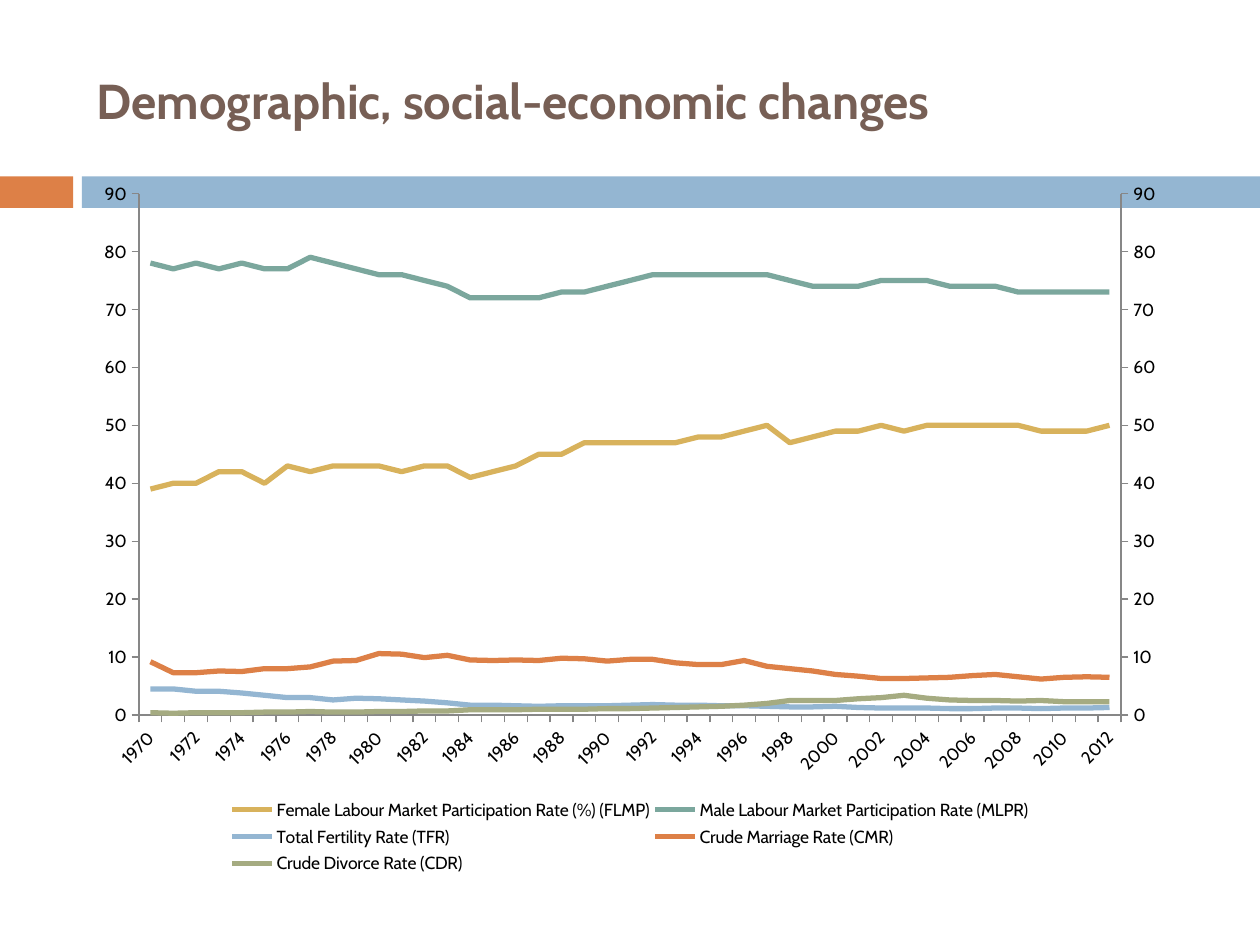
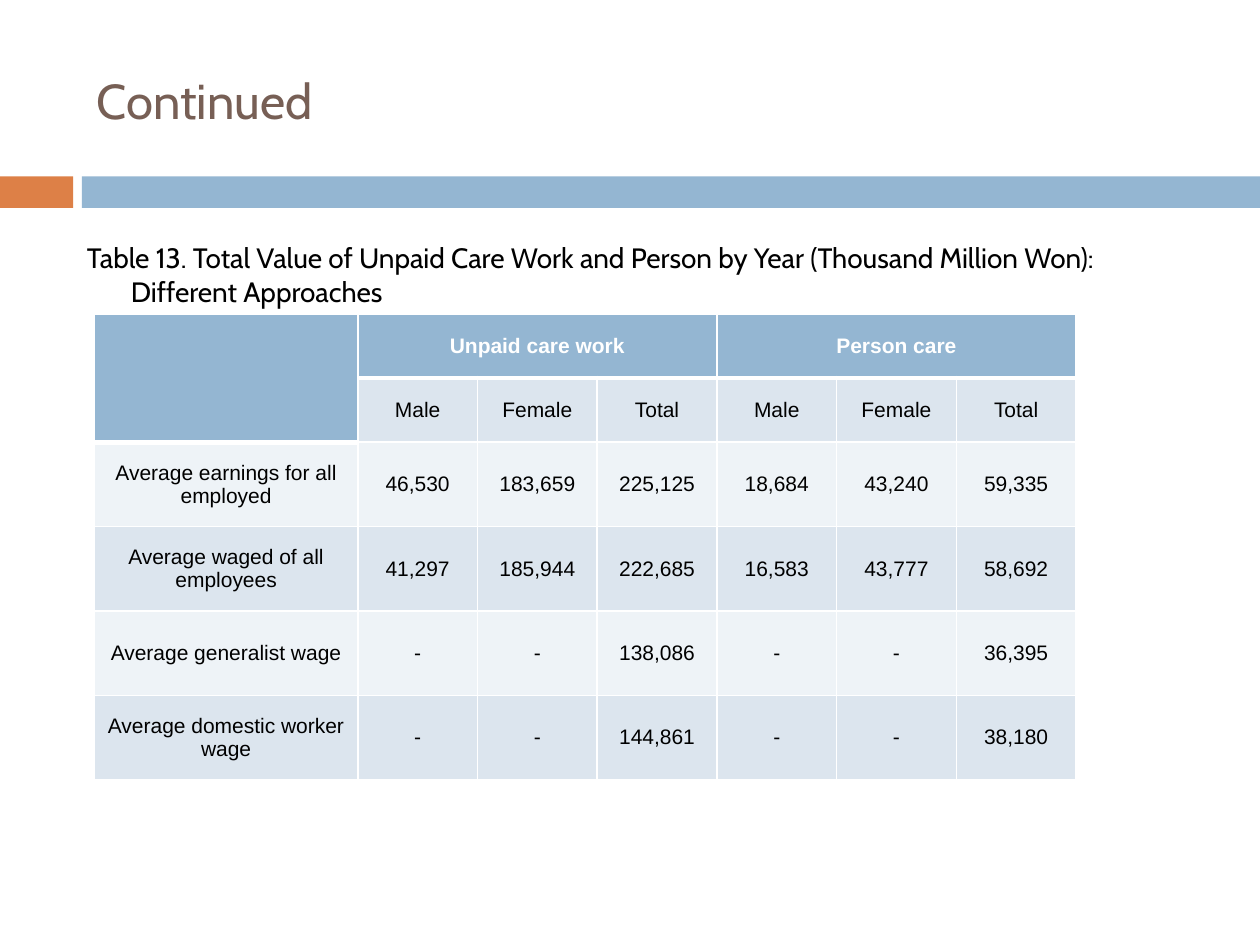
"""Build two slides on demographic change and the value of unpaid care work."""
import copy
import dataclasses

import pptx
import pptx.chart.axis
import pptx.chart.data
import pptx.dml.color
import pptx.enum.chart
import pptx.enum.shapes
import pptx.enum.text
import pptx.oxml
import pptx.oxml.ns
import pptx.util
from lxml import etree

Inches = pptx.util.Inches
Pt = pptx.util.Pt
qn = pptx.oxml.ns.qn


@dataclasses.dataclass(frozen=True)
class Theme:
    heading_font: str = "Cabin"
    table_font: str = "Arial"
    title_size: int = 28
    caption_size: int = 16
    table_size: int = 12
    chart_size: int = 10
    title: str = "775F55"
    text: str = "000000"
    white: str = "FFFFFF"
    axis: str = "878787"
    orange: str = "DD8047"
    blue: str = "94B6D2"
    gold: str = "D8B25C"
    teal: str = "7BA79D"
    olive: str = "A5AB81"
    bands: tuple = ("EEF3F7", "DCE5EE")


def rgb(color):
    return pptx.dml.color.RGBColor.from_string(color)


class Deck:
    def __init__(self, theme):
        self.theme = theme
        self.presentation = pptx.Presentation()
        self.presentation.slide_width = Inches(10)
        self.presentation.slide_height = Inches(7.5)
        self.slide = None

    def add_slide(self, title, bold=False):
        layout = self.presentation.slide_layouts[6]
        self.slide = self.presentation.slides.add_slide(layout)
        self.add_band(0, 0.58, self.theme.orange)
        self.add_band(0.65, 9.35, self.theme.blue)
        heading = self.add_text(title, (0.67, 0.25, 8.92, 1.08),
                                self.theme.title_size, self.theme.title, bold)
        heading.vertical_anchor = pptx.enum.text.MSO_ANCHOR.MIDDLE

    def add_band(self, left, width, color):
        band = self.slide.shapes.add_shape(
            pptx.enum.shapes.MSO_SHAPE.RECTANGLE,
            Inches(left), Inches(1.4), Inches(width), Inches(0.25))
        band.shadow.inherit = False
        band.fill.solid()
        band.fill.fore_color.rgb = rgb(color)
        band.line.fill.background()

    def style_font(self, font, name, size, color, bold=False):
        font.name = name
        font.size = Pt(size)
        font.bold = bold
        font.color.rgb = rgb(color)

    def add_text(self, text, box, size, color, bold=False, hanging=0):
        frame = self.slide.shapes.add_textbox(*map(Inches, box)).text_frame
        frame.word_wrap = True
        paragraph = frame.paragraphs[0]
        paragraph.text = text
        if hanging:
            properties = paragraph._p.get_or_add_pPr()
            properties.set("marL", str(Inches(hanging)))
            properties.set("indent", str(-Inches(hanging)))
        self.style_font(paragraph.font, self.theme.heading_font, size, color, bold)
        return frame

    def add_line_chart(self, box, categories, left_series, right_series, left_max, right_max):
        series = left_series + right_series
        data = pptx.chart.data.CategoryChartData()
        data.categories = categories
        for name, _, values in series:
            data.add_series(name, values)
        chart = self.slide.shapes.add_chart(
            pptx.enum.chart.XL_CHART_TYPE.LINE, *map(Inches, box), data).chart
        chart.has_title = False
        self.style_font(chart.font, self.theme.heading_font,
                        self.theme.chart_size, self.theme.text)
        chart.plots[0].vary_by_categories = False
        for line, (_, color, _) in zip(chart.plots[0].series, series):
            line.smooth = False
            line.format.line.width = Pt(3)
            line.format.line.color.rgb = rgb(color)

        for axis in (chart.category_axis, chart.value_axis):
            axis.has_major_gridlines = False
            axis.major_tick_mark = pptx.enum.chart.XL_TICK_MARK.OUTSIDE
            axis.minor_tick_mark = pptx.enum.chart.XL_TICK_MARK.NONE
            axis.format.line.color.rgb = rgb(self.theme.axis)
            self.style_font(axis.tick_labels.font, self.theme.heading_font,
                            self.theme.chart_size, self.theme.text)
        chart.value_axis.tick_labels.number_format = "#,##0;\\-#,##0"
        chart.value_axis.tick_labels.number_format_is_linked = False
        chart.value_axis.minimum_scale = 0
        self.add_right_axis(chart, len(left_series), right_max)
        chart.value_axis.maximum_scale = left_max
        chart.value_axis.major_unit = 10

        plot_area = chart.element.find(".//" + qn("c:plotArea"))
        label_body = plot_area.find(f"{qn('c:catAx')}/{qn('c:txPr')}/{qn('a:bodyPr')}")
        label_body.set("rot", "-2700000")
        self.place(plot_area, 0, (0.05, 0.04, 0.9, 0.73), inner=True)
        chart.has_legend = True
        chart.legend.position = pptx.enum.chart.XL_LEGEND_POSITION.BOTTOM
        chart.legend.include_in_layout = False
        self.style_font(chart.legend.font, self.theme.heading_font,
                        self.theme.chart_size, self.theme.text)
        self.place(chart.element.find(".//" + qn("c:legend")), 1, (0.13, 0.88, 0.74, 0.12))

    def add_right_axis(self, chart, left_count, maximum):
        left_plot = chart.element.find(".//" + qn("c:lineChart"))
        right_plot = copy.deepcopy(left_plot)
        left_plot.addnext(right_plot)
        for line in left_plot.findall(qn("c:ser"))[left_count:]:
            left_plot.remove(line)
        for line in right_plot.findall(qn("c:ser"))[:left_count]:
            right_plot.remove(line)
        category_id, value_id = "5001", "5002"
        for reference, axis_id in zip(right_plot.findall(qn("c:axId")), (category_id, value_id)):
            reference.set("val", axis_id)

        plot_area = left_plot.getparent()
        left_values = plot_area.find(qn("c:valAx"))
        right_values = copy.deepcopy(left_values)
        hidden_years = copy.deepcopy(plot_area.find(qn("c:catAx")))
        left_values.addnext(right_values)
        right_values.addnext(hidden_years)
        for axis, own_id, cross_id in ((right_values, value_id, category_id),
                                       (hidden_years, category_id, value_id)):
            axis.find(qn("c:axId")).set("val", own_id)
            axis.find(qn("c:crossAx")).set("val", cross_id)
        right_values.find(qn("c:axPos")).set("val", "r")
        right_values.find(qn("c:crosses")).set("val", "max")
        right_axis = pptx.chart.axis.ValueAxis(right_values)
        right_axis.maximum_scale = maximum
        right_axis.major_unit = 2
        pptx.chart.axis.CategoryAxis(hidden_years).visible = False

    def place(self, parent, index, fractions, inner=False):
        for previous in parent.findall(qn("c:layout")):
            parent.remove(previous)
        layout = etree.Element(qn("c:layout"))
        manual = etree.SubElement(layout, qn("c:manualLayout"))
        settings = [("layoutTarget", "inner")] if inner else []
        settings += [("xMode", "edge"), ("yMode", "edge"), *zip("xywh", fractions)]
        for tag, value in settings:
            etree.SubElement(manual, qn("c:" + tag)).set("val", str(value))
        parent.insert(index, layout)

    def add_table(self, box, widths, heights, rows, merges):
        table = self.slide.shapes.add_table(
            len(rows), len(widths), *map(Inches, box)).table
        table.horz_banding = False
        for column, width in zip(table.columns, widths):
            column.width = Inches(width)
        for row, height in zip(table.rows, heights):
            row.height = Inches(height)
        for r, texts in enumerate(rows):
            for c, text in enumerate(texts):
                self.fill_cell(table.cell(r, c), r, c, text)
        for first, last in merges:
            table.cell(*first).merge(table.cell(*last))

    def fill_cell(self, cell, r, c, text):
        is_corner = c == 0 and r < 2
        is_header = r == 0 or is_corner
        cell.text = text
        cell.vertical_anchor = pptx.enum.text.MSO_ANCHOR.MIDDLE
        paragraph = cell.text_frame.paragraphs[0]
        paragraph.alignment = pptx.enum.text.PP_ALIGN.CENTER
        self.style_font(paragraph.font, self.theme.table_font, self.theme.table_size,
                        self.theme.white if is_header else self.theme.text, is_header)
        cell.fill.solid()
        cell.fill.fore_color.rgb = rgb(self.theme.blue if is_header else self.theme.bands[r % 2])
        below_header = r == (2 if c == 0 else 1)
        widths = {"L": 1, "R": 1, "T": 3 if below_header else 1, "B": 3 if is_header else 1}
        for index, (side, width) in enumerate(widths.items()):
            border = etree.Element(qn("a:ln" + side), w=str(Pt(width)))
            fill = etree.SubElement(border, qn("a:solidFill"))
            etree.SubElement(fill, qn("a:srgbClr"), val=self.theme.white)
            cell._tc.get_or_add_tcPr().insert(index, border)


def main():
    theme = Theme()
    deck = Deck(theme)

    deck.add_slide("Demographic, social-economic changes", bold=True)
    participation = [
        ("Female Labour Market Participation Rate (%) (FLMP)", theme.gold,
         [39, 40, 40, 42, 42, 40, 43, 42, 43, 43, 43, 42, 43, 43, 41, 42, 43, 45, 45, 47, 47, 47,
          47, 47, 48, 48, 49, 50, 47, 48, 49, 49, 50, 49, 50, 50, 50, 50, 50, 49, 49, 49, 50]),
        ("Male Labour Market Participation Rate (MLPR)", theme.teal,
         [78, 77, 78, 77, 78, 77, 77, 79, 78, 77, 76, 76, 75, 74, 72, 72, 72, 72, 73, 73, 74, 75,
          76, 76, 76, 76, 76, 76, 75, 74, 74, 74, 75, 75, 75, 74, 74, 74, 73, 73, 73, 73, 73]),
    ]
    family = [
        ("Total Fertility Rate (TFR)", theme.blue,
         [4.5, 4.5, 4.1, 4.1, 3.8, 3.4, 3, 3, 2.6, 2.9, 2.8, 2.6, 2.4, 2.1, 1.7, 1.7, 1.6, 1.5,
          1.6, 1.6, 1.6, 1.7, 1.8, 1.7, 1.7, 1.6, 1.6, 1.5, 1.4, 1.4, 1.5, 1.3, 1.2, 1.2, 1.2,
          1.1, 1.1, 1.2, 1.2, 1.1, 1.2, 1.2, 1.3]),
        ("Crude Marriage Rate (CMR)", theme.orange,
         [9.2, 7.3, 7.3, 7.6, 7.5, 8, 8, 8.3, 9.3, 9.4, 10.6, 10.5, 9.9, 10.3, 9.5, 9.4, 9.5, 9.4,
          9.8, 9.7, 9.3, 9.6, 9.6, 9, 8.7, 8.7, 9.4, 8.4, 8, 7.6, 7, 6.7, 6.3, 6.3, 6.4,
          6.5, 6.8, 7, 6.6, 6.2, 6.5, 6.6, 6.5]),
        ("Crude Divorce Rate (CDR)", theme.olive,
         [0.4, 0.3, 0.4, 0.4, 0.4, 0.5, 0.5, 0.6, 0.5, 0.5, 0.6, 0.6, 0.7, 0.7, 0.9, 0.9, 0.9, 1,
          1, 1, 1.1, 1.1, 1.2, 1.3, 1.4, 1.5, 1.7, 2, 2.5, 2.5, 2.5, 2.8, 3, 3.4, 2.9,
          2.6, 2.5, 2.5, 2.4, 2.5, 2.3, 2.3, 2.3]),
    ]
    years = [str(year) for year in range(1970, 2013)]
    deck.add_line_chart((0.67, 1.31, 8.66, 5.67), years, participation, family, 90, 12)

    deck.add_slide("Continued")
    deck.add_text("Table 13. Total Value of Unpaid Care Work and Person by Year "
                  "(Thousand Million Won): Different Approaches",
                  (0.59, 1.86, 8.92, 4.92), theme.caption_size, theme.text, hanging=0.35)
    care_values = [
        ["", "Unpaid care work", "", "", "Person care", "", ""],
        ["", *["Male", "Female", "Total"] * 2],
        ["Average earnings for all employed",
         "46,530", "183,659", "225,125", "18,684", "43,240", "59,335"],
        ["Average waged of all employees",
         "41,297", "185,944", "222,685", "16,583", "43,777", "58,692"],
        ["Average generalist wage", "-", "-", "138,086", "-", "-", "36,395"],
        ["Average domestic worker wage", "-", "-", "144,861", "-", "-", "38,180"],
    ]
    deck.add_table((0.75, 2.49, 7.8, 3.7), [2.09] + [0.95] * 6, [0.51] * 2 + [0.67] * 4,
                   care_values, [((0, 0), (1, 0)), ((0, 1), (0, 3)), ((0, 4), (0, 6))])

    deck.presentation.save("out.pptx")


if __name__ == "__main__":
    main()
